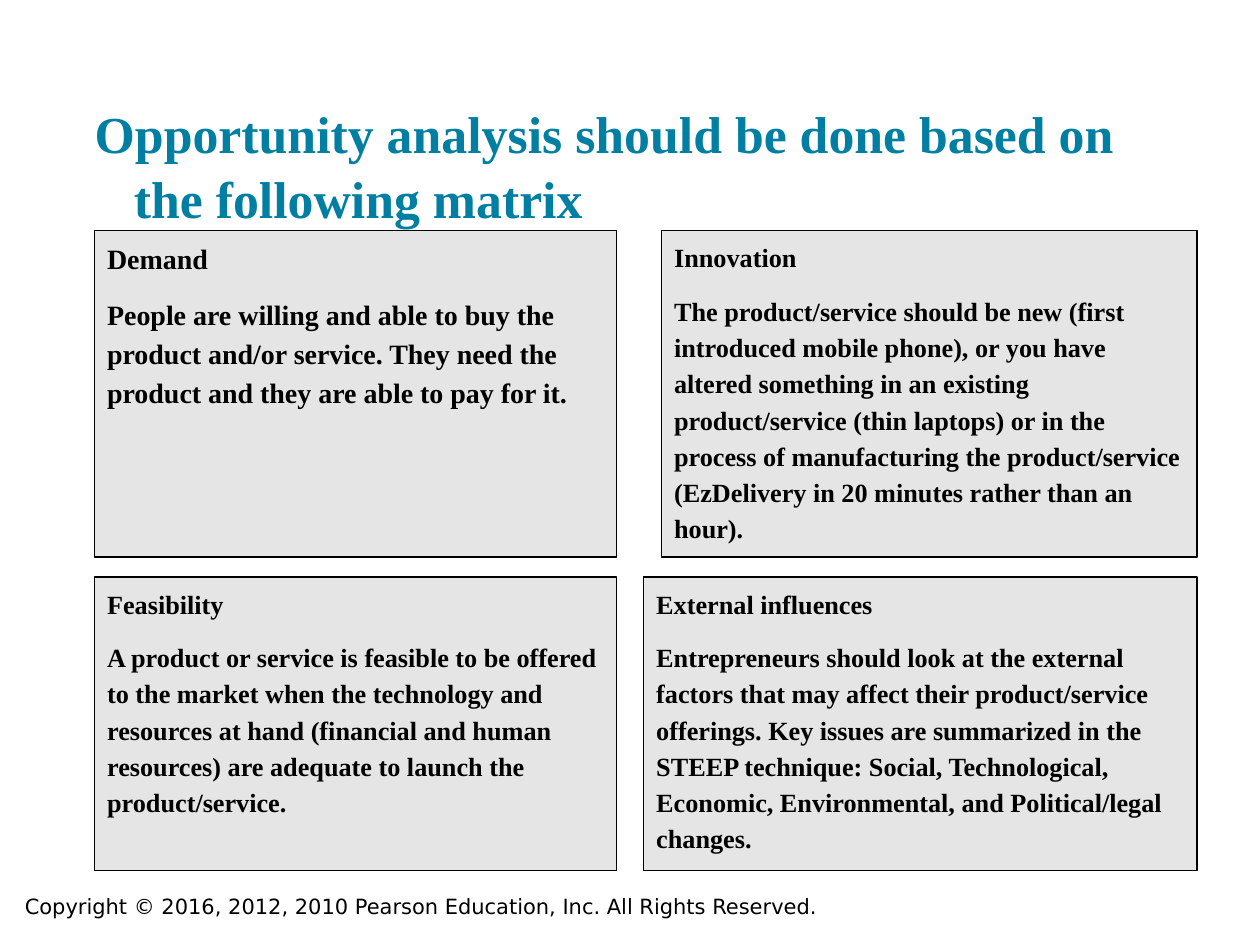
from pptx import Presentation
from pptx.dml.color import RGBColor
from pptx.enum.shapes import MSO_SHAPE
from pptx.enum.text import MSO_ANCHOR, PP_ALIGN
from pptx.util import Cm, Pt

RECT = MSO_SHAPE.RECTANGLE
TOP = MSO_ANCHOR.TOP
LEFT = PP_ALIGN.LEFT

SERIF = "Times New Roman"
SANS = "DejaVu Sans"
MARGIN = 1.91
RIGHT_EDGE = 24.13
LEFT_WIDTH = 10.52

ROWS = [
    (4.65, 6.58, 13.34, [
        ("Demand", 16,
         "People are willing and able to buy the product and/or service. "
         "They need the product and they are able to pay for it."),
        ("Innovation", 15,
         "The product/service should be new (first introduced mobile phone), "
         "or you have altered something in an existing product/service "
         "(thin laptops) or in the process of manufacturing the "
         "product/service (EzDelivery in 20 minutes rather than an hour)."),
    ]),
    (11.63, 5.92, 12.98, [
        ("Feasibility", 15,
         "A product or service is feasible to be offered to the market when "
         "the technology and resources at hand (financial and human "
         "resources) are adequate to launch the product/service."),
        ("External influences", 15,
         "Entrepreneurs should look at the external factors that may affect "
         "their product/service offerings. Key issues are summarized in the "
         "STEEP technique: Social, Technological, Economic, Environmental, "
         "and Political/legal changes."),
    ]),
]


def color(value):
    return RGBColor.from_string(value)


def add_run(p, text, size, font=SERIF, fill="000000", bold=True):
    r = p.add_run()
    r.text = text
    r.font.name = font
    r.font.size = Pt(size)
    r.font.bold = bold
    r.font.color.rgb = color(fill)


def add_text(s, x, y, w, h):
    tf = s.shapes.add_textbox(Cm(x), Cm(y), Cm(w), Cm(h)).text_frame
    tf.word_wrap = True
    return tf


def add_title(s, text):
    tf = add_text(s, MARGIN, 1.91, 22.22, 2.11)
    tf.margin_left = tf.margin_right = tf.margin_bottom = 0
    tf.margin_top = Cm(0.1)
    p = tf.paragraphs[0]
    p.line_spacing = 1.04
    pPr = p._p.get_or_add_pPr()
    hang = Cm(0.79)
    pPr.set("marL", str(hang))
    pPr.set("indent", str(-hang))
    add_run(p, text, 29.6, fill="007FA3")


def add_card(s, x, y, w, h, heading, size, body):
    sp = s.shapes.add_shape(RECT, Cm(x), Cm(y), Cm(w), Cm(h))
    sp.shadow.inherit = False
    sp.fill.solid()
    sp.fill.fore_color.rgb = color("E5E5E5")
    sp.line.color.rgb = color("000000")
    sp.line.width = Pt(0.75)
    tf = sp.text_frame
    tf.word_wrap = True
    tf.vertical_anchor = TOP
    for i, text in enumerate((heading, body)):
        p = tf.add_paragraph() if i else tf.paragraphs[0]
        p.alignment = LEFT
        p.line_spacing = 1.15
        p.space_after = Pt(10)
        add_run(p, text, size)


def add_matrix(s):
    for y, h, right_x, cards in ROWS:
        columns = [(MARGIN, LEFT_WIDTH), (right_x, RIGHT_EDGE - right_x)]
        for (x, w), card in zip(columns, cards):
            add_card(s, x, y, w, h, *card)


def add_footer(s, text):
    tf = add_text(s, 0.25, 17.88, 17.32, 0.76)
    add_run(tf.paragraphs[0], text, 12, SANS, bold=False)


def main():
    prs = Presentation()
    prs.slide_width = Cm(25.4)
    prs.slide_height = Cm(19.05)
    s = prs.slides.add_slide(prs.slide_layouts[6])
    add_footer(s, "Copyright © 2016, 2012, 2010 Pearson Education, Inc. "
                  "All Rights Reserved.")
    add_title(s, "Opportunity analysis should be done based on "
                 "the following matrix")
    add_matrix(s)
    prs.save("out.pptx")


if __name__ == "__main__":
    main()
